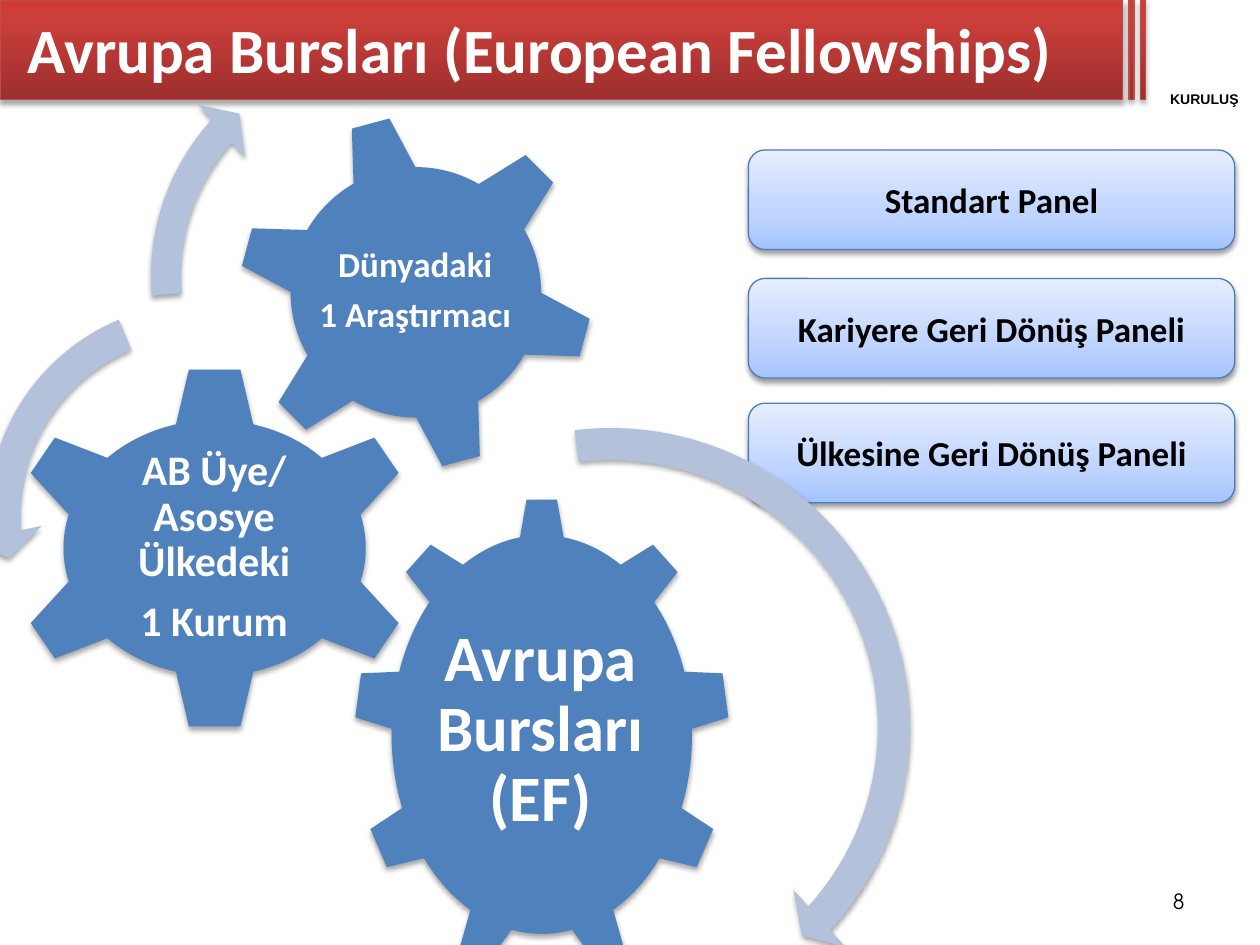
from dataclasses import dataclass

from lxml.etree import SubElement
from pptx import Presentation
from pptx.dml.color import RGBColor
from pptx.enum.shapes import MSO_SHAPE
from pptx.enum.text import MSO_ANCHOR, MSO_AUTO_SIZE, PP_ALIGN
from pptx.oxml.ns import qn
from pptx.util import Pt

WHITE = RGBColor(0xFF, 0xFF, 0xFF)
BLACK = RGBColor(0, 0, 0)
GEAR_BLUE = RGBColor(0x4F, 0x81, 0xBD)
ARROW_BLUE = RGBColor(0xB3, 0xC1, 0xDB)
PANEL_LINE = RGBColor(0x4B, 0x7E, 0xBC)
BAND_LINE = RGBColor(0xBF, 0x4C, 0x48)
BAND_STOPS = (
    (0, RGBColor(0x9C, 0x2F, 0x2D)),
    (80, RGBColor(0xCB, 0x3E, 0x3A)),
    (100, RGBColor(0xCE, 0x3B, 0x37)),
)
PANEL_STOPS = (
    (0, RGBColor(0xA4, 0xC4, 0xFF)),
    (35, RGBColor(0xBF, 0xD4, 0xFF)),
    (100, RGBColor(0xE6, 0xEE, 0xFF)),
)


@dataclass(frozen=True)
class Box:
    left: float
    top: float
    width: float
    height: float

    def lengths(self) -> tuple:
        return Pt(self.left), Pt(self.top), Pt(self.width), Pt(self.height)


@dataclass(frozen=True)
class Gear:
    kind: MSO_SHAPE
    box: Box
    rotation: float
    label: Box
    lines: tuple
    size: float
    inset: float


@dataclass(frozen=True)
class Arrow:
    kind: MSO_SHAPE
    box: Box
    adjustments: tuple


@dataclass(frozen=True)
class Panel:
    text: str
    top: float


GEARS = (
    Gear(MSO_SHAPE.GEAR_9, Box(202.3, 284.4, 214.6, 270.7), 0,
         Box(244.8, 344.2, 128.2, 146.9), ("Avrupa Bursları (EF)",), 37, 3.6),
    Gear(MSO_SHAPE.GEAR_6, Box(5, 208.8, 235.4, 208.8), 0,
         Box(61.2, 261.4, 122.4, 103),
         ("AB Üye/ Asosye Ülkedeki", "1 Kurum"), 24, 2.2),
    Gear(MSO_SHAPE.GEAR_6, Box(135.4, 64.8, 204.5, 204.5), 345,
         Box(180, 109.4, 114.5, 114.5), ("Dünyadaki", "1 Araştırmacı"), 20, 2.2),
)
ARROWS = (
    Arrow(MSO_SHAPE.CIRCULAR_ARROW, Box(165.6, 231.8, 367.2, 367.2),
          (0.05, 2.99, 25.54, 157.81, 0.06)),
    Arrow(MSO_SHAPE.LEFT_CIRCULAR_ARROW, Box(-18.7, 161.3, 267.1, 267.1),
          (0.07, 4.3, 104.89, 148.38, 0.08)),
    Arrow(MSO_SHAPE.CIRCULAR_ARROW, Box(74.9, 13.7, 288, 288),
          (0.06, 3.94, 133.14, 105.08, 0.07)),
)
BACK_PANELS = (
    Panel("Kariyere Geri Dönüş Paneli", 159.1),
    Panel("Ülkesine Geri Dönüş Paneli", 230.4),
)
FRONT_PANEL = Panel("Standart Panel", 85.7)
BANDS = (Box(0, 0, 641.5, 56.9), Box(645.1, 0, 2.9, 56.9), Box(651.6, 0, 2.9, 56.9))


def add_shadow(sp, opacity: int) -> None:
    sp.shadow.inherit = False
    effects = sp._element.spPr.find(qn("a:effectLst"))
    shadow = SubElement(effects, qn("a:outerShdw"), blurRad=str(Pt(3.1)),
                        dist=str(Pt(1.8)), dir="5400000", rotWithShape="0")
    color = SubElement(shadow, qn("a:srgbClr"), val=str(BLACK))
    SubElement(color, qn("a:alpha"), val=str(opacity * 1000))


def fill_gradient(sp, stops: tuple) -> None:
    sp.fill.gradient()
    sp.fill.gradient_angle = 90
    stop_list = sp._element.spPr.find(qn("a:gradFill")).find(qn("a:gsLst"))
    for stop in list(stop_list):
        stop_list.remove(stop)
    for position, color in stops:
        stop = SubElement(stop_list, qn("a:gs"), pos=str(position * 1000))
        SubElement(stop, qn("a:srgbClr"), val=str(color))


def write_text(sp, lines: tuple, size: float, color: RGBColor, inset: tuple,
               align=PP_ALIGN.CENTER, name="Calibri", bold=True) -> None:
    tf = sp.text_frame
    tf.text = "\n".join(lines)
    tf.word_wrap = True
    tf.auto_size = MSO_AUTO_SIZE.NONE
    tf.vertical_anchor = MSO_ANCHOR.MIDDLE
    tf.margin_left = tf.margin_right = Pt(inset[0])
    tf.margin_top = tf.margin_bottom = Pt(inset[1])
    for p in tf.paragraphs:
        p.alignment = align
        for r in p.runs:
            r.font.name = name
            r.font.size = Pt(size)
            r.font.bold = bold
            r.font.color.rgb = color


def add_gradient_shape(s, kind: MSO_SHAPE, box: Box, stops: tuple,
                       line: RGBColor, opacity: int):
    sp = s.shapes.add_shape(kind, *box.lengths())
    fill_gradient(sp, stops)
    sp.line.color.rgb = line
    sp.line.width = Pt(0.75)
    add_shadow(sp, opacity)
    return sp


def add_solid_shape(s, kind: MSO_SHAPE, box: Box, color: RGBColor):
    sp = s.shapes.add_shape(kind, *box.lengths())
    sp.fill.solid()
    sp.fill.fore_color.rgb = color
    sp.line.fill.background()
    add_shadow(sp, 35)
    return sp


def add_panel(s, panel: Panel) -> None:
    box = Box(427.7, panel.top, 277.9, 56.9)
    sp = add_gradient_shape(s, MSO_SHAPE.ROUNDED_RECTANGLE, box,
                            PANEL_STOPS, PANEL_LINE, 38)
    write_text(sp, (panel.text,), 20, BLACK, (17.3, 15.1))


def add_gear(s, gear: Gear) -> None:
    sp = add_solid_shape(s, gear.kind, gear.box, GEAR_BLUE)
    sp.rotation = gear.rotation
    label = s.shapes.add_textbox(*gear.label.lengths())
    write_text(label, gear.lines, gear.size, WHITE, (gear.inset, gear.inset))
    for p in label.text_frame.paragraphs:
        p.line_spacing = 0.9
        p.space_after = Pt(round(gear.size * 0.35, 1))


def add_arrow(s, arrow: Arrow) -> None:
    sp = add_solid_shape(s, arrow.kind, arrow.box, ARROW_BLUE)
    for i, value in enumerate(arrow.adjustments):
        sp.adjustments[i] = value


def main() -> None:
    prs = Presentation()
    prs.slide_width, prs.slide_height = Pt(720), Pt(540)
    s = prs.slides.add_slide(prs.slide_layouts[5])

    for band in BANDS:
        add_gradient_shape(s, MSO_SHAPE.RECTANGLE, band, BAND_STOPS, BAND_LINE, 35)
    tag = s.shapes.add_textbox(*Box(651.6, 51.8, 73.4, 9.4).lengths())
    write_text(tag, ("KURULUŞ",), 8, BLACK, (0, 0), name="Arial")

    title = s.shapes.title
    title.left, title.top, title.width, title.height = Box(8.6, 0, 635, 55.4).lengths()
    write_text(title, ("Avrupa Bursları (European Fellowships)",), 36, WHITE,
               (7.2, 3.6), PP_ALIGN.LEFT)
    s.shapes._spTree.append(title._element)

    number = s.shapes.add_textbox(*Box(516.2, 500.4, 167.8, 28.8).lengths())
    write_text(number, ("8",), 12, BLACK, (7.2, 3.6), PP_ALIGN.RIGHT,
               "TeX Gyre Adventor", False)

    for panel in BACK_PANELS:
        add_panel(s, panel)
    for gear in GEARS:
        add_gear(s, gear)
    for arrow in ARROWS:
        add_arrow(s, arrow)
    add_panel(s, FRONT_PANEL)

    prs.save("out.pptx")


if __name__ == "__main__":
    main()
